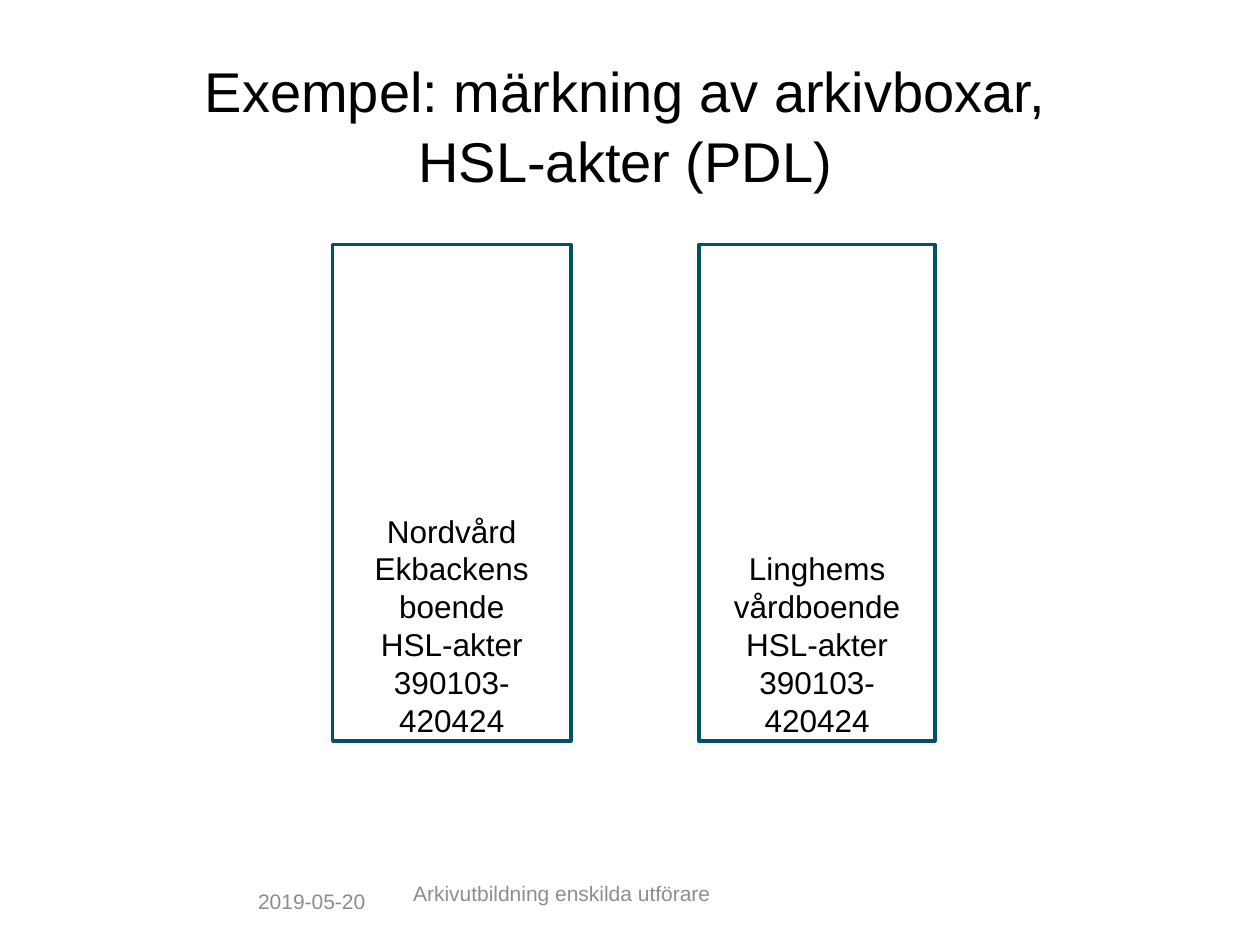
from dataclasses import dataclass

from pptx import Presentation
from pptx.dml.color import RGBColor
from pptx.enum.shapes import MSO_SHAPE
from pptx.enum.text import MSO_ANCHOR, MSO_AUTO_SIZE, PP_ALIGN
from pptx.util import Inches, Pt

BLACK = RGBColor(0x00, 0x00, 0x00)
WHITE = RGBColor(0xFF, 0xFF, 0xFF)
TEAL = RGBColor(0x00, 0x53, 0x65)
DATE_GREY = RGBColor(0x8C, 0x8C, 0x8C)
FOOTER_GREY = RGBColor(0x8E, 0x8E, 0x8E)
FONT = "Arial"
BOX_TOP, BOX_HEIGHT = 1.94, 3.94


@dataclass
class ArchiveBox:
    left: float
    width: float
    lines: list[str]


@dataclass
class FooterText:
    left: float
    top: float
    width: float
    text: str
    color: RGBColor


PERIOD = ["HSL-akter", "390103-420424"]
BOXES = [
    ArchiveBox(2.64, 1.89, ["Nordvård", "Ekbackens boende", *PERIOD]),
    ArchiveBox(5.55, 1.87, ["Linghems vårdboende", *PERIOD]),
]
FOOTERS = [
    FooterText(1.95, 6.95, 1.23, "2019-05-20", DATE_GREY),
    FooterText(3.18, 6.89, 3.95, "Arkivutbildning enskilda utförare", FOOTER_GREY),
]


def format_text(tf, size: int, color: RGBColor, align: PP_ALIGN) -> None:
    tf.word_wrap = True
    for p in tf.paragraphs:
        p.alignment = align
        p.font.name = FONT
        p.font.size = Pt(size)
        p.font.color.rgb = color


def add_title(s, text: str) -> None:
    title = s.shapes.title
    title.left, title.top = Inches(0.75), Inches(0.42)
    title.width, title.height = Inches(8.43), Inches(1.25)
    tf = title.text_frame
    tf.text = text
    tf.auto_size = MSO_AUTO_SIZE.NONE
    tf.vertical_anchor = MSO_ANCHOR.TOP
    tf.margin_left = tf.margin_right = tf.margin_top = tf.margin_bottom = 0
    format_text(tf, 32, BLACK, PP_ALIGN.CENTER)
    tf.paragraphs[0].line_spacing = 1.05


def add_archive_box(s, box: ArchiveBox) -> None:
    sp = s.shapes.add_shape(
        MSO_SHAPE.RECTANGLE, Inches(box.left), Inches(BOX_TOP),
        Inches(box.width), Inches(BOX_HEIGHT))
    sp.shadow.inherit = False
    sp.fill.solid()
    sp.fill.fore_color.rgb = WHITE
    sp.line.color.rgb = TEAL
    sp.line.width = Pt(2)
    tf = sp.text_frame
    tf.text = "\n".join(box.lines)
    tf.vertical_anchor = MSO_ANCHOR.BOTTOM
    tf.margin_bottom = Inches(0.02)
    format_text(tf, 18, BLACK, PP_ALIGN.CENTER)


def add_footer(s, footer: FooterText) -> None:
    sp = s.shapes.add_textbox(
        Inches(footer.left), Inches(footer.top), Inches(footer.width), Inches(0.4))
    tf = sp.text_frame
    tf.text = footer.text
    tf.vertical_anchor = MSO_ANCHOR.MIDDLE
    format_text(tf, 12, footer.color, PP_ALIGN.LEFT)


def main() -> None:
    prs = Presentation()
    prs.slide_width, prs.slide_height = Inches(10), Inches(7.5)
    s = prs.slides.add_slide(prs.slide_layouts[5])
    add_title(s, "Exempel: märkning av arkivboxar,\vHSL-akter (PDL)")
    for box in BOXES:
        add_archive_box(s, box)
    for footer in FOOTERS:
        add_footer(s, footer)
    prs.save("out.pptx")


if __name__ == "__main__":
    main()
